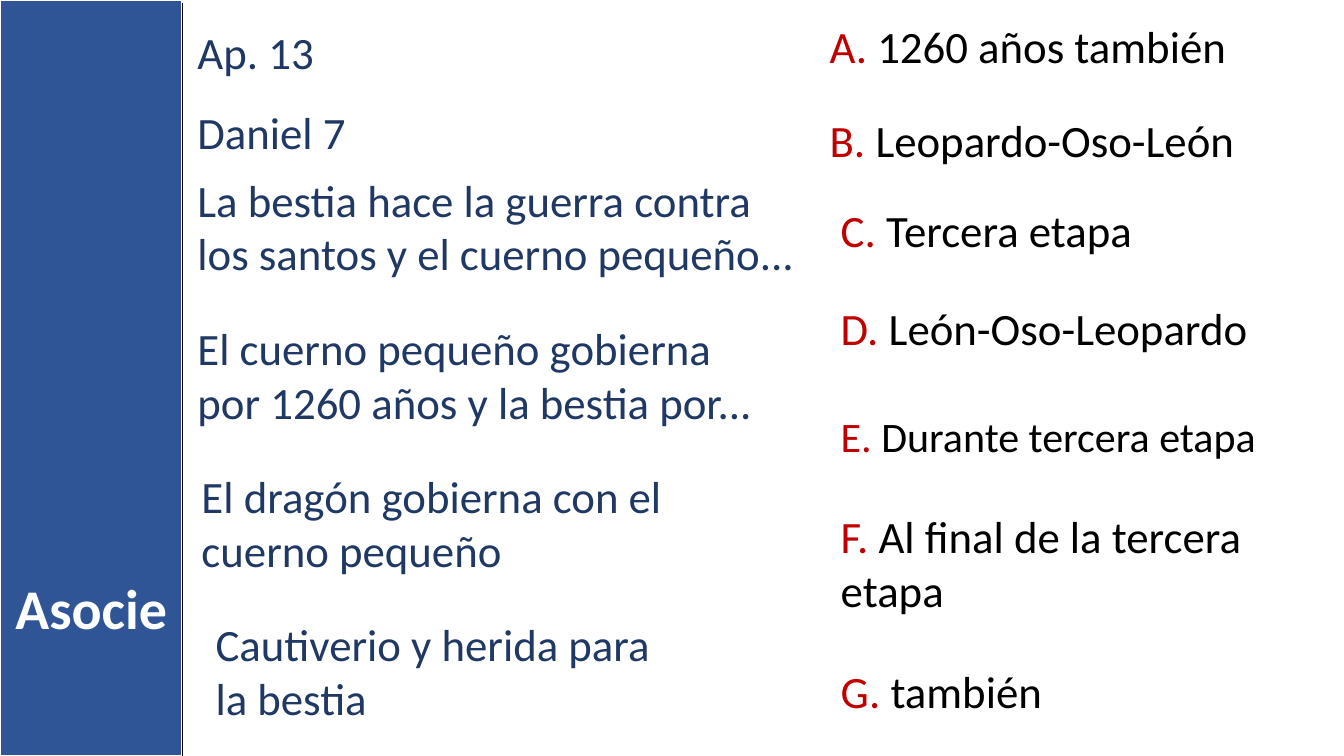
"""Builds a matching exercise slide: prompts beside lettered answers."""
import pptx
import pptx.dml.color
import pptx.enum.shapes
import pptx.enum.text
import pptx.oxml
import pptx.util

Inches = pptx.util.Inches

TITLE = "Asocie"
PROMPTS = [
    ("Ap. 13", 1.86, 0.2, 5.11, 0.64),
    ("Daniel 7", 1.86, 0.99, 5.24, 0.64),
    ("La bestia hace la guerra contra los santos y el cuerno pequeño...", 1.86, 1.66, 6.27, 1.18),
    ("El cuerno pequeño gobierna por 1260 años y la bestia por...", 1.86, 3.13, 5.72, 1.18),
    ("El dragón gobierna con el cuerno pequeño", 1.9, 4.6, 5.08, 1.18),
    ("Cautiverio y herida para la bestia", 2.04, 6.07, 4.77, 1.18),
]
ANSWERS = [
    ("1260 años también", 8.13, 0.14, 4.43, 0.64, 32),
    ("Leopardo-Oso-León", 8.13, 1.07, 4.75, 0.64, 32),
    ("Tercera etapa", 8.24, 1.96, 4.32, 0.64, 32),
    ("León-Oso-Leopardo", 8.24, 2.93, 5.04, 0.64, 32),
    ("Durante tercera etapa", 8.24, 4.02, 4.8, 0.61, 30),
    ("Al final de la tercera etapa", 8.24, 5, 4.44, 1.18, 32),
    ("también", 8.24, 6.54, 4.48, 0.64, 32),
]
SIDEBAR_WIDTH, SLIDE_WIDTH, SLIDE_HEIGHT = 1.81, 13.33, 7.5
BLUE, NAVY, RED, BLACK, WHITE = "2F5597", "203864", "C00000", "000000", "FFFFFF"


def color(value):
    return pptx.dml.color.RGBColor.from_string(value)


def set_values(target, values):
    for name, value in values.items():
        setattr(target, name, value)


def write_text(shape, runs, size, bold=False, centered=False):
    set_values(shape.text_frame, {
        "word_wrap": True,
        "auto_size": pptx.enum.text.MSO_AUTO_SIZE.SHAPE_TO_FIT_TEXT,
    })
    paragraph = shape.text_frame.paragraphs[0]
    if centered:
        paragraph.alignment = pptx.enum.text.PP_ALIGN.CENTER
    for text, text_color in runs:
        run = paragraph.add_run()
        run.text = text
        set_values(run.font, {"name": "Calibri", "size": pptx.util.Pt(size), "bold": bold})
        run.font.color.rgb = color(text_color)


def add_text(slide, box, runs, size=32):
    write_text(slide.shapes.add_textbox(*map(Inches, box)), runs, size)


def add_sidebar(slide):
    sidebar = slide.shapes.add_shape(
        pptx.enum.shapes.MSO_SHAPE.RECTANGLE, 0, 0, Inches(SIDEBAR_WIDTH), Inches(SLIDE_HEIGHT))
    sidebar.shadow.inherit = False
    sidebar.fill.solid()
    sidebar.fill.fore_color.rgb = color(BLUE)
    sidebar.line.color.rgb = color(WHITE)
    sidebar.line.width = pptx.util.Pt(1.5)

    title = slide.shapes.title
    set_values(title, {"left": 0, "top": Inches(5.64),
                       "width": Inches(SIDEBAR_WIDTH), "height": Inches(0.77)})
    write_text(title, [(TITLE, WHITE)], 40, bold=True, centered=True)
    sidebar.element.addnext(title.element)

    edge = slide.shapes.add_connector(
        pptx.enum.shapes.MSO_CONNECTOR.STRAIGHT,
        Inches(SIDEBAR_WIDTH), Inches(0.03), Inches(SIDEBAR_WIDTH), Inches(SLIDE_HEIGHT))
    edge.line.color.rgb = color(BLACK)
    edge.line.width = pptx.util.Pt(1)
    edge.element.spPr.append(pptx.oxml.parse_xml(
        '<a:effectLst xmlns:a="http://schemas.openxmlformats.org/drawingml/2006/main"/>'))


def main():
    presentation = pptx.Presentation()
    set_values(presentation, {"slide_width": Inches(SLIDE_WIDTH),
                              "slide_height": Inches(SLIDE_HEIGHT)})
    slide = presentation.slides.add_slide(presentation.slide_layouts.get_by_name("Title Only"))
    add_sidebar(slide)
    for text, *box in PROMPTS:
        add_text(slide, box, [(text, NAVY)])
    for letter, (text, *box, size) in zip("ABCDEFG", ANSWERS):
        add_text(slide, box, [(f"{letter}. ", RED), (text, BLACK)], size)
    presentation.save("out.pptx")


if __name__ == "__main__":
    main()
